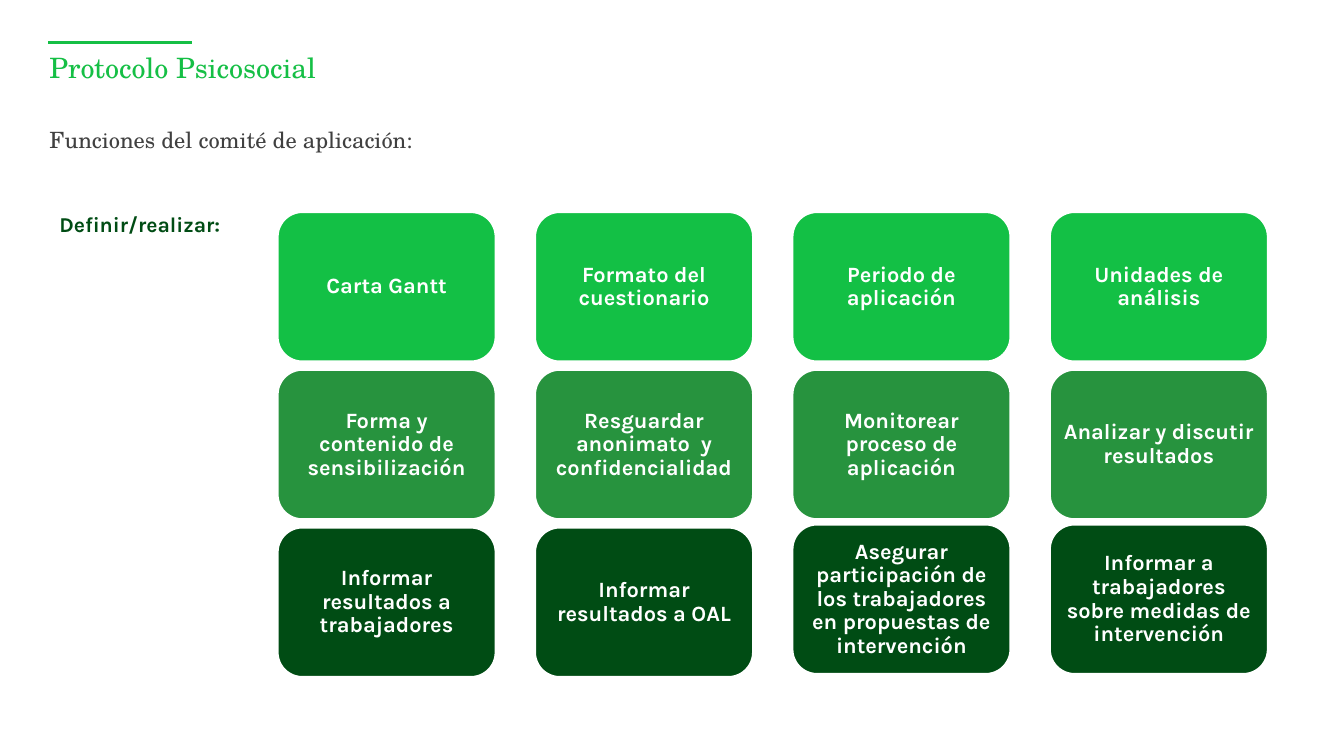
from lxml.etree import SubElement
from pptx import Presentation
from pptx.dml.color import RGBColor
from pptx.enum.shapes import MSO_CONNECTOR, MSO_SHAPE
from pptx.enum.text import MSO_ANCHOR, MSO_AUTO_SIZE, PP_ALIGN
from pptx.oxml.ns import qn
from pptx.util import Inches, Pt

ACCENT = RGBColor(0x15, 0xBF, 0x45)
BRIGHT_GREEN = RGBColor(0x13, 0xC0, 0x45)
MID_GREEN = RGBColor(0x27, 0x93, 0x3E)
DARK_GREEN = RGBColor(0x00, 0x4C, 0x14)
GRAY = RGBColor(0x40, 0x40, 0x40)
WHITE = RGBColor(0xFF, 0xFF, 0xFF)
SERIF = "TeX Gyre Schola"
SANS = "Karla"

COLUMN_STEP = 2.553
ROW_STEP = 1.565
CARD_WIDTH = 2.17
CARD_HEIGHT = 1.49
RAISE = 0.03  # the last two cards of the bottom row sit slightly higher

FUNCTIONS = [
    (BRIGHT_GREEN, ["Carta Gantt", "Formato del cuestionario",
                    "Periodo de aplicación", "Unidades de análisis"]),
    (MID_GREEN, ["Forma y contenido de sensibilización",
                 "Resguardar anonimato  y confidencialidad",
                 "Monitorear proceso de aplicación",
                 "Analizar y discutir resultados"]),
    (DARK_GREEN, ["Informar resultados a trabajadores",
                  "Informar resultados a OAL",
                  "Asegurar participación de los trabajadores en propuestas de intervención",
                  "Informar a trabajadores sobre medidas de intervención"]),
]


def write(shape, text, *, size, font, color, bold=False, align=PP_ALIGN.LEFT,
          anchor=MSO_ANCHOR.TOP, insets=(0, 0), spacing=0.9):
    """Fill a shape with one formatted paragraph; insets are (sides, top and bottom)."""
    frame = shape.text_frame
    frame.word_wrap = True
    frame.auto_size = MSO_AUTO_SIZE.NONE
    frame.vertical_anchor = anchor
    frame.margin_left = frame.margin_right = Inches(insets[0])
    frame.margin_top = frame.margin_bottom = Inches(insets[1])
    para = frame.paragraphs[0]
    para.alignment = align
    para.line_spacing = spacing
    para.space_before = Pt(0)
    span = para.add_run()
    span.text = text
    span.font.size = Pt(size)
    span.font.name = font
    span.font.bold = bold
    span.font.color.rgb = color


def add_text(page, box, text, **style):
    write(page.shapes.add_textbox(*map(Inches, box)), text, **style)


def add_heading(page, left, top, width):
    # Accent rule
    rule = page.shapes.add_connector(
        MSO_CONNECTOR.STRAIGHT, Inches(left - 0.01), Inches(top),
        Inches(left + 1.41), Inches(top))
    rule.line.color.rgb = ACCENT
    rule.line.width = Pt(1.75)
    SubElement(rule._element.spPr, qn("a:effectLst"))

    # Title
    title = page.shapes.title
    title.left, title.top = Inches(left), Inches(top + 0.12)
    title.width, title.height = Inches(width), Inches(0.57)
    write(title, "Protocolo Psicosocial", size=20, font=SERIF, color=ACCENT)

    # Subtitle
    add_text(page, (left, top + 0.86, width, 0.39),
             "Funciones del comité de aplicación:",
             size=16, font=SERIF, color=GRAY)


def add_card(page, left, top, text, fill):
    card = page.shapes.add_shape(
        MSO_SHAPE.ROUNDED_RECTANGLE, Inches(left), Inches(top),
        Inches(CARD_WIDTH), Inches(CARD_HEIGHT))
    card.shadow.inherit = False
    card.fill.solid()
    card.fill.fore_color.rgb = fill
    card.line.color.rgb = WHITE
    card.line.width = Pt(2)
    write(card, text, size=15.6, font=SANS, color=WHITE, bold=True,
          align=PP_ALIGN.CENTER, anchor=MSO_ANCHOR.MIDDLE, insets=(0.07, 0.07))


def add_card_grid(page, left, top):
    for row, (fill, labels) in enumerate(FUNCTIONS):
        for column, label in enumerate(labels):
            raised = row == len(FUNCTIONS) - 1 and column >= 2
            add_card(page, left + column * COLUMN_STEP,
                     top + row * ROW_STEP - (RAISE if raised else 0), label, fill)


def main():
    deck = Presentation()
    deck.slide_width, deck.slide_height = Inches(13.33), Inches(7.5)
    page = deck.slides.add_slide(deck.slide_layouts[5])

    add_heading(page, 0.49, 0.42, 10.79)
    add_text(page, (0.49, 2.05, 6.34, 0.35), "Definir/realizar:", size=15.1,
             font=SANS, color=DARK_GREEN, bold=True, insets=(0.1, 0.05), spacing=1.0)
    add_card_grid(page, 2.75, 2.1)

    deck.save("out.pptx")


if __name__ == "__main__":
    main()
